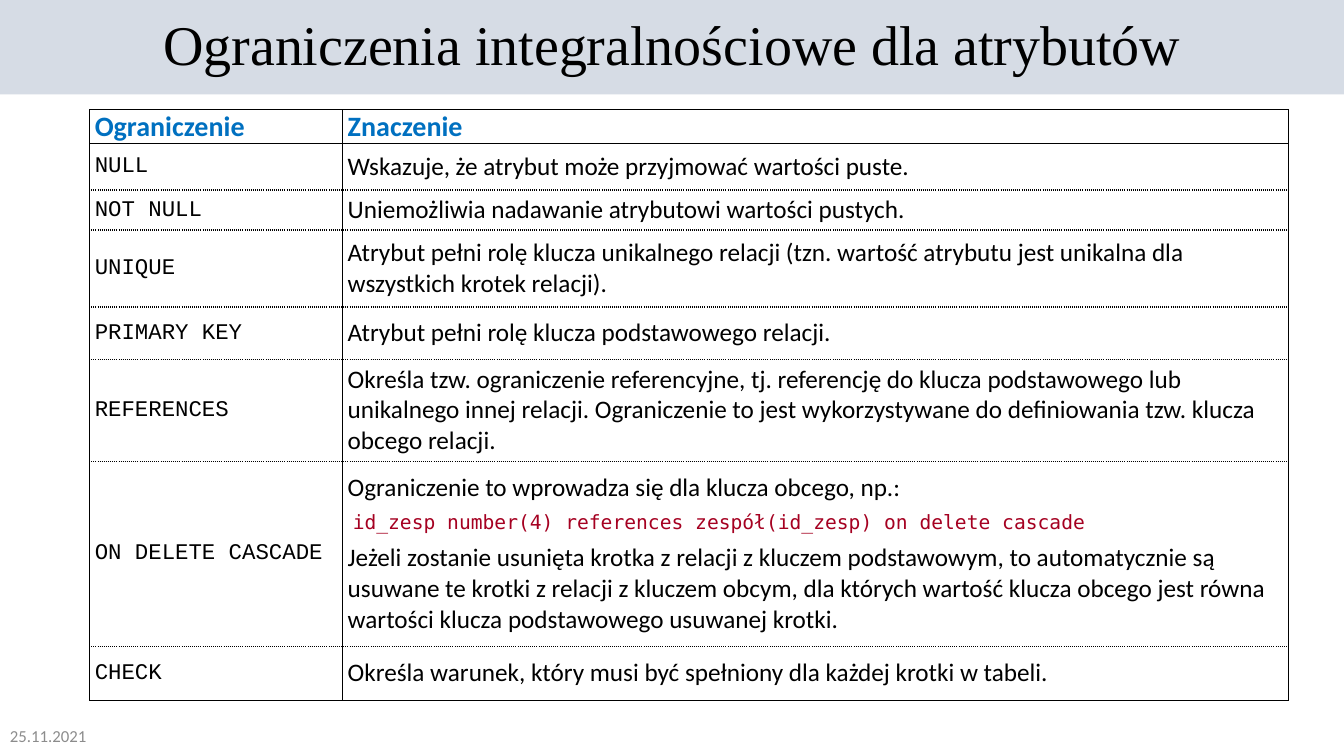
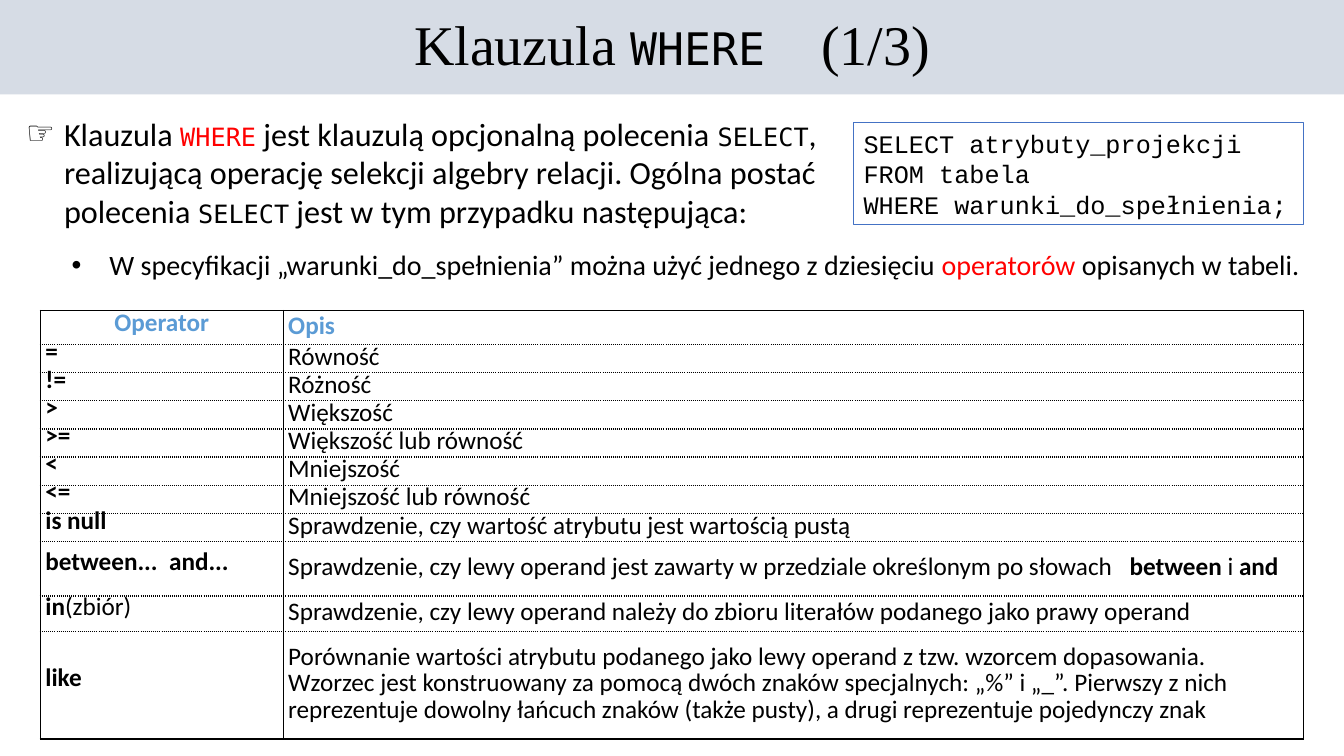
"""Build two slides on integrity constraints and the WHERE clause."""
from lxml.etree import SubElement
from pptx import Presentation
from pptx.dml.color import RGBColor
from pptx.enum.shapes import MSO_SHAPE as Shape
from pptx.enum.text import MSO_ANCHOR as Anchor, MSO_AUTO_SIZE as Auto, PP_ALIGN as Align
from pptx.oxml.ns import qn
from pptx.util import Pt

COLORS = {"band": "D6DCE5", "ink": "000000", "paper": "FFFFFF", "date": "8C8C8C",
          "blue": "0070C0", "sky": "5B9BD5", "red": "FF0000", "wine": "A50021",
          "frame": "4472C4"}


def style(name, size, color="ink", bold=False):
    return {"name": name, "size": Pt(size), "bold": bold, "color": color}


SANS, MONO, CODE = "Calibri", "DejaVu Sans Mono", "Courier New"
STYLES = {
    "title": style("Times New Roman", 40), "title code": style(MONO, 32),
    "date": style(SANS, 12, "date"),
    "lead": style(SANS, 23), "lead code": style(MONO, 18), "red code": style(MONO, 18, "red"),
    "point": style(SANS, 20), "red point": style(SANS, 20, "red"),
    "query": style(CODE, 18), "name": style(CODE, 16), "example": style(MONO, 14, "wine"),
    "text": style(SANS, 18), "bold": style(SANS, 18, bold=True),
    "blue head": style(SANS, 20, "blue", True), "sky head": style(SANS, 18, "sky", True),
}

BAND = (0, 0, 960, 67.5)
DATE = ("25.11.2021", (0, 511, 216, 29))
HEADING = [("Ograniczenia integralnościowe dla atrybutów", "title")]
WHERE = [("Klauzula ", "title"), ("WHERE", "title code"), (" ", "title", 30), ("(1/3)", "title")]

LEAD = [("Klauzula ", "lead"), ("WHERE", "red code"),
        (" jest klauzulą opcjonalną polecenia ", "lead"), ("SELECT", "lead code"),
        (", realizującą operację selekcji algebry relacji. Ogólna postać polecenia ", "lead"),
        ("SELECT", "lead code"), (" jest w tym przypadku następująca:", "lead")]
POINT = [("W specyfikacji „warunki_do_spełnienia” można użyć jednego z dziesięciu ", "point"),
         ("operatorów ", "red point"), ("opisanych w tabeli.", "point")]
LISTS = [("☞", LEAD, (11.5, 77.8, 608.4, 90.7)), ("•", POINT, (43.9, 173.5, 923, 31.7))]
QUERY = ["SELECT atrybuty_projekcji", "FROM tabela", "WHERE warunki_do_spełnienia;"]
QUERY_BOX = (609.8, 87.8, 321.1, 72.7)

LIMITS = {
    "place": (64.1, 78.5), "cols": (180.7, 675.4),
    "rows": [24.3, 33, 28.6, 55, 37.2, 73, 132, 38.8],
    "solid": (0, 1, 8), "head": "blue head", "styles": ("name", "text"),
    "heads": ({"space_before": Pt(6)},) * 2,
    "formats": ({"space_before": Pt(6)},) * 2,
    "cells": [
        ("Ograniczenie", "Znaczenie"),
        ("NULL", "Wskazuje, że atrybut może przyjmować wartości puste."),
        ("NOT NULL", "Uniemożliwia nadawanie atrybutowi wartości pustych."),
        ("UNIQUE", "Atrybut pełni rolę klucza unikalnego relacji (tzn. wartość atrybutu "
                   "jest unikalna dla wszystkich krotek relacji)."),
        ("PRIMARY KEY", "Atrybut pełni rolę klucza podstawowego relacji."),
        ("REFERENCES", "Określa tzw. ograniczenie referencyjne, tj. referencję do klucza "
                       "podstawowego lub unikalnego innej relacji. Ograniczenie to jest "
                       "wykorzystywane do definiowania tzw. klucza obcego relacji."),
        ("ON DELETE CASCADE", [
            [("Ograniczenie to wprowadza się dla klucza obcego, np.:", "text")],
            [("id_zesp number(4) references zespół(id_zesp) on delete cascade", "example")],
            [("Jeżeli zostanie usunięta krotka z relacji z kluczem podstawowym, to "
              "automatycznie są usuwane te krotki z relacji z kluczem obcym, dla których "
              "wartość klucza obcego jest równa wartości klucza podstawowego usuwanej "
              "krotki.", "text")]]),
        ("CHECK", "Określa warunek, który musi być spełniony dla każdej krotki w tabeli."),
    ],
}


def exact(align, lead):
    return {"alignment": align, "line_spacing": Pt(lead), "space_before": Pt(3)}


OPERATORS = {
    "place": (28.8, 221.8), "cols": (173.5, 728.6),
    "rows": [24.3] + [20.1] * 7 + [38.9, 25.2, 77],
    "solid": (0, 11), "head": "sky head", "styles": ("bold", "text"),
    "heads": (exact(Align.CENTER, 15), exact(Align.LEFT, 19)),
    "formats": (exact(Align.JUSTIFY, 12), exact(Align.LEFT, 19)),
    "cells": [
        ("Operator", "Opis"),
        ("=", "Równość"),
        ("!=", "Różność"),
        (">", "Większość"),
        (">=", "Większość lub równość"),
        ("<", "Mniejszość"),
        ("<=", "Mniejszość lub równość"),
        ("is null", "Sprawdzenie, czy wartość atrybutu jest wartością pustą"),
        ([[("between...", "bold"), (" ", "bold", 4), ("and...", "bold")]],
         [[("Sprawdzenie, czy lewy operand jest zawarty w przedziale określonym po słowach",
            "text"), (" ", "text", 8), ("between ", "bold"), ("i ", "text"), ("and", "bold")]]),
        ([[("in", "bold"), ("(zbiór)", "text")]],
         "Sprawdzenie, czy lewy operand należy do zbioru literałów podanego jako prawy operand"),
        ("like", "Porównanie wartości atrybutu podanego jako lewy operand z tzw. wzorcem "
                 "dopasowania. Wzorzec jest konstruowany za pomocą dwóch znaków specjalnych: "
                 "„%” i „_”. Pierwszy z nich reprezentuje dowolny łańcuch znaków (także pusty), "
                 "a drugi reprezentuje pojedynczy znak"),
    ],
}


def color(name):
    return RGBColor.from_string(COLORS[name])


def points(box):
    return [Pt(value) for value in box]


def place(shape, box):
    for key, value in zip(("left", "top", "width", "height"), points(box)):
        setattr(shape, key, value)


def add_run(par, text, look, gap=0):
    run = par.add_run()
    run.text = text
    for key, value in STYLES[look].items():
        if key == "color":
            run.font.color.rgb = color(value)
        else:
            setattr(run.font, key, value)
    if gap:
        run._r.get_or_add_rPr().set("spc", str(gap * 100))


def write(frame, pars, **form):
    frame.word_wrap = True
    for num, runs in enumerate(pars):
        par = frame.add_paragraph() if num else frame.paragraphs[0]
        for key, value in form.items():
            setattr(par, key, value)
        if runs[0][1] == "example":
            par._p.get_or_add_pPr().set("marL", str(Pt(3.6)))
        for run in runs:
            add_run(par, *run)


def add_slide(deck, layout, heading):
    slide = deck.slides.add_slide(deck.slide_layouts[layout])
    title = slide.shapes.title
    place(title, BAND)
    title.fill.solid()
    title.fill.fore_color.rgb = color("band")
    frame = title.text_frame
    frame.auto_size, frame.vertical_anchor = Auto.NONE, Anchor.MIDDLE
    write(frame, [heading], alignment=Align.CENTER, line_spacing=0.9)
    return slide


def add_edges(cell, top, bottom):
    props = cell._tc.get_or_add_tcPr()
    for side, dash in (("L", "solid"), ("R", "solid"), ("T", top), ("B", bottom)):
        line = SubElement(props, qn("a:ln" + side), w=str(Pt(1)))
        SubElement(SubElement(line, qn("a:solidFill")), qn("a:srgbClr"), val=COLORS["ink"])
        SubElement(line, qn("a:prstDash"), val=dash)


def add_grid(slide, data):
    cols, rows = data["cols"], data["rows"]
    box = (*data["place"], sum(cols), sum(rows))
    grid = slide.shapes.add_table(len(rows), len(cols), *points(box)).table
    grid.first_row = grid.horz_banding = False
    for col, width in zip(grid.columns, cols):
        col.width = Pt(width)
    dashes = ["solid" if n in data["solid"] else "sysDot" for n in range(len(rows) + 1)]
    for r, (height, line) in enumerate(zip(rows, data["cells"])):
        grid.rows[r].height = Pt(height)
        for c, pars in enumerate(line):
            cell = grid.cell(r, c)
            cell.margin_left = cell.margin_right = Pt(3.6)
            cell.margin_top = cell.margin_bottom = 0
            cell.vertical_anchor = Anchor.MIDDLE
            add_edges(cell, dashes[r], dashes[r + 1])
            cell.fill.solid()
            cell.fill.fore_color.rgb = color("paper")
            look = data["styles"][c] if r else data["head"]
            form = data["formats" if r else "heads"][c]
            if isinstance(pars, str):
                pars = [[(pars, look)]]
            write(cell.text_frame, pars, **form)


def add_list(body, mark, runs, box):
    place(body, box)
    frame = body.text_frame
    frame.auto_size, frame.vertical_anchor = Auto.NONE, Anchor.TOP
    write(frame, [runs], space_before=Pt(0))
    props = frame.paragraphs[0]._p.get_or_add_pPr()
    props.set("marL", str(Pt(27)))
    props.set("indent", str(Pt(-27)))
    SubElement(props, qn("a:buChar"), char=mark)


def add_query(slide):
    box = slide.shapes.add_shape(Shape.RECTANGLE, *points(QUERY_BOX))
    box.shadow.inherit = False
    box.fill.background()
    box.line.color.rgb = color("frame")
    box.line.width = Pt(0.75)
    write(box.text_frame, [[(line, "query")] for line in QUERY], alignment=Align.LEFT)


def main():
    deck = Presentation()
    deck.slide_width, deck.slide_height = Pt(960), Pt(540)

    slide = add_slide(deck, 5, HEADING)
    text, box = DATE
    date = slide.shapes.add_textbox(*points(box)).text_frame
    date.vertical_anchor = Anchor.MIDDLE
    write(date, [[(text, "date")]])
    add_grid(slide, LIMITS)

    slide = add_slide(deck, 3, WHERE)
    for spot, item in enumerate(LISTS, 1):
        add_list(slide.placeholders[spot], *item)
    add_query(slide)
    add_grid(slide, OPERATORS)
    deck.save("out.pptx")


if __name__ == "__main__":
    main()
